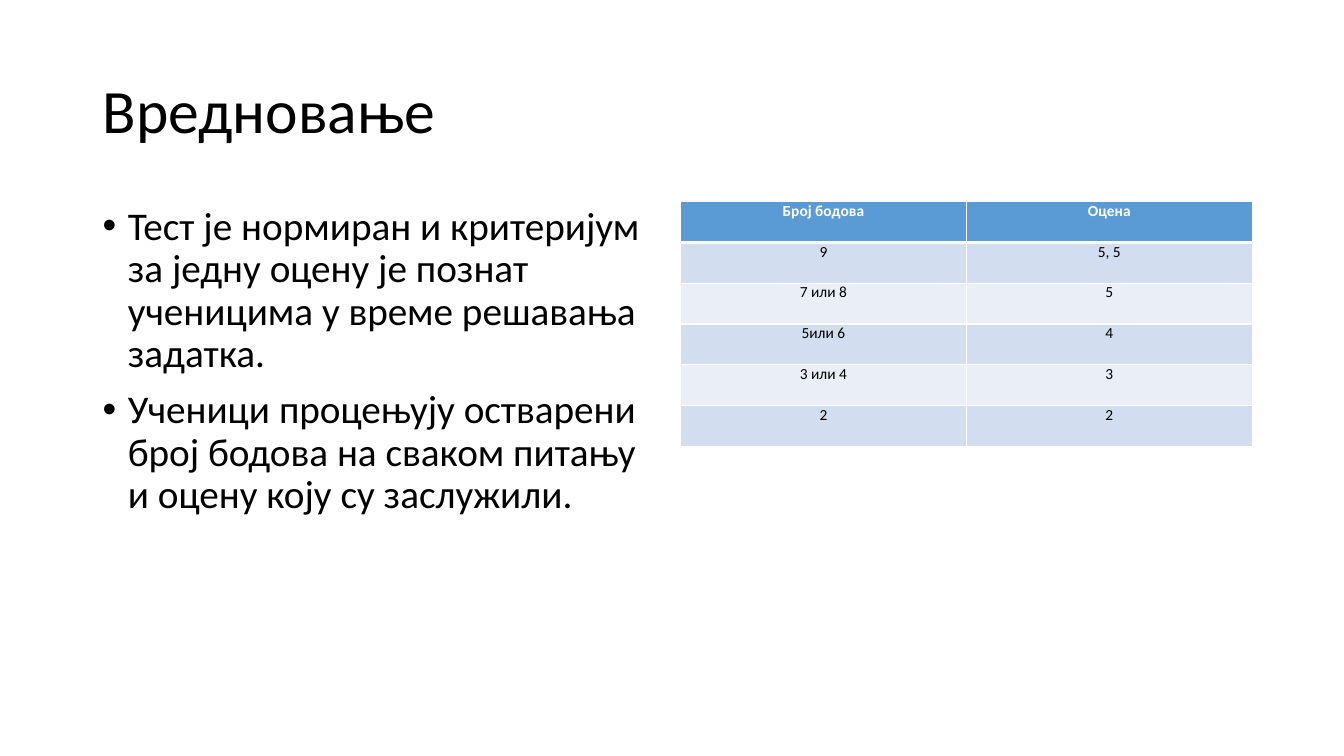
from lxml import etree
from pptx import Presentation
from pptx.dml.color import RGBColor
from pptx.enum.text import MSO_ANCHOR as Anchor, MSO_AUTO_SIZE as AutoSize, PP_ALIGN as Align
from pptx.oxml.ns import qn
from pptx.util import Inches, Pt

FONT = "Calibri"
COLORS = {
    "text": "000000",
    "white": "FFFFFF",
    "header": "5B9BD5",
    "odd_row": "D2DEEF",
    "even_row": "EAEFF7",
}
TITLE = "Вредновање"
POINTS = [
    "Тест је нормиран и критеријум за једну оцену је познат "
    "ученицима у време решавања задатка.",
    "Ученици процењују остварени број бодова на сваком питању "
    "и оцену коју су заслужили.",
]
GRADES = [
    ("Број бодова", "Оцена"),
    ("9", "5, 5"),
    ("7 или 8", "5"),
    ("5или 6", "4"),
    ("3 или 4", "3"),
    ("2", "2"),
]


def style(para, size, color="text", bold=False):
    para.font.name = FONT
    para.font.size = Pt(size)
    para.font.bold = bold
    para.font.color.rgb = RGBColor.from_string(COLORS[color])


def set_title(page):
    title = page.shapes.title
    title.left, title.top = Inches(0.92), Inches(0.4)
    title.width, title.height = Inches(11.5), Inches(1.45)
    frame = title.text_frame
    frame.text = TITLE
    frame.auto_size = AutoSize.NONE
    frame.vertical_anchor = Anchor.MIDDLE
    para = frame.paragraphs[0]
    para.alignment = Align.LEFT
    para.line_spacing = 0.9
    style(para, 44)


def add_bullet(para):
    props = para._p.get_or_add_pPr()
    props.set("marL", str(Inches(0.25)))
    props.set("indent", str(-Inches(0.25)))
    etree.SubElement(props, qn("a:buFont"), typeface="Arial")
    etree.SubElement(props, qn("a:buChar"), char="•")


def add_points(page):
    box = page.shapes.add_textbox(Inches(0.92), Inches(2), Inches(5.67), Inches(4.76))
    frame = box.text_frame
    frame.word_wrap = True
    frame.text = "\n".join(POINTS)
    for para in frame.paragraphs:
        para.line_spacing = 0.9
        para.space_before = Pt(10)
        add_bullet(para)
        style(para, 28)


def add_borders(cell, bottom_width):
    props = cell._tc.get_or_add_tcPr()
    for side, width in (("L", 1), ("R", 1), ("T", 1), ("B", bottom_width)):
        line = etree.SubElement(props, qn(f"a:ln{side}"), w=str(Pt(width)))
        fill = etree.SubElement(line, qn("a:solidFill"))
        etree.SubElement(fill, qn("a:srgbClr"), val=COLORS["white"])


def fill_cell(cell, text, row):
    is_header = row == 0
    cell.margin_left = cell.margin_right = Inches(0.07)
    cell.margin_top = cell.margin_bottom = 0
    cell.text = text
    para = cell.text_frame.paragraphs[0]
    para.alignment = Align.CENTER
    style(para, 11, "white" if is_header else "text", bold=is_header)
    # Borders come before the fill in the cell properties
    add_borders(cell, 3 if is_header else 1)
    shade = "header" if is_header else "odd_row" if row % 2 else "even_row"
    cell.fill.solid()
    cell.fill.fore_color.rgb = RGBColor.from_string(COLORS[shade])


def add_grades(page):
    row_height = Inches(2.43) // len(GRADES)
    table = page.shapes.add_table(
        len(GRADES), 2, Inches(6.75), Inches(2), Inches(5.67), Inches(2.43)
    ).table
    for row, texts in enumerate(GRADES):
        table.rows[row].height = row_height
        for column, text in enumerate(texts):
            fill_cell(table.cell(row, column), text, row)


def main():
    deck = Presentation()
    deck.slide_width, deck.slide_height = Inches(13.33), Inches(7.5)
    page = deck.slides.add_slide(deck.slide_layouts[5])  # title only
    set_title(page)
    add_points(page)
    add_grades(page)
    deck.save("out.pptx")


if __name__ == "__main__":
    main()
